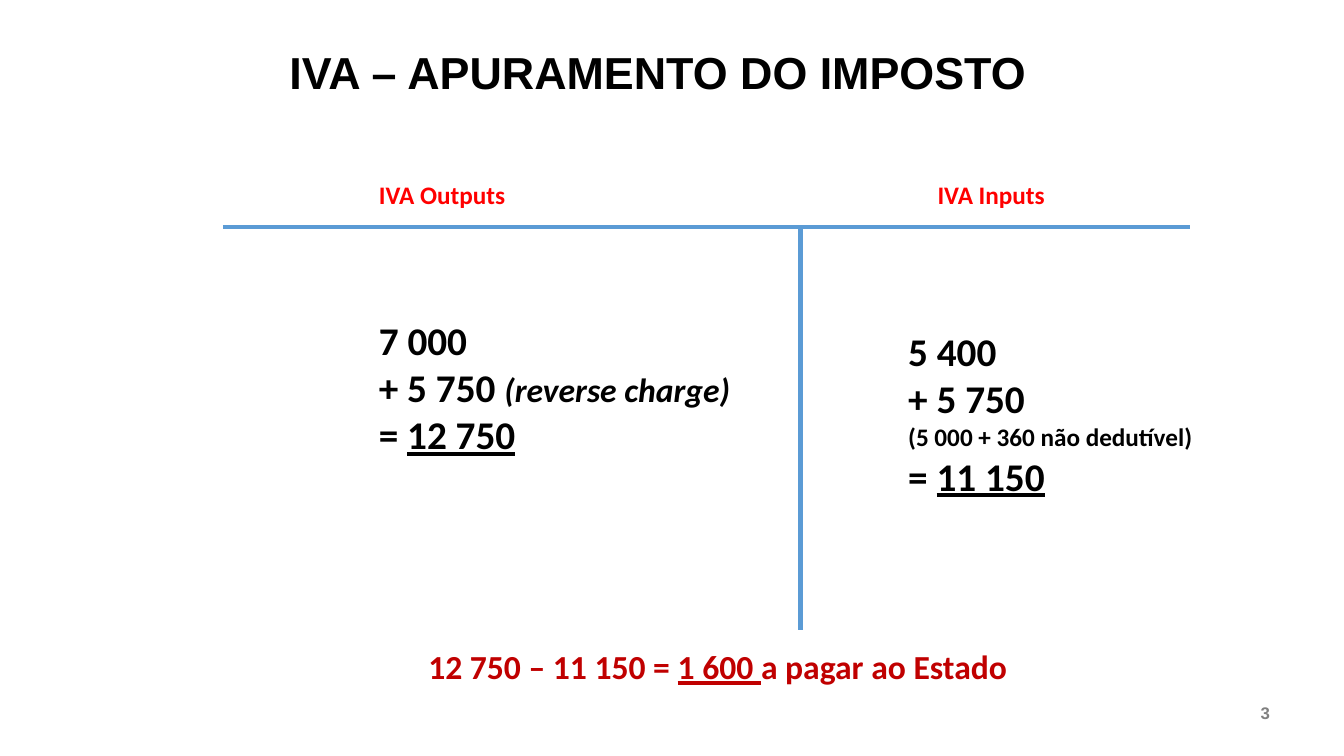
from pptx import Presentation
from pptx.dml.color import RGBColor
from pptx.enum import shapes, text
from pptx.oxml import ns
from pptx.util import Inches, Pt
from lxml import etree

BLACK = RGBColor(0x00, 0x00, 0x00)
RED = RGBColor(0xFF, 0x00, 0x00)
DARK_RED = RGBColor(0xC0, 0x00, 0x00)
GRAY = RGBColor(0x80, 0x80, 0x80)
BLUE = RGBColor(0x5B, 0x9B, 0xD5)


def write(box, lines, size, color=BLACK, font="Calibri",
          align=text.PP_ALIGN.LEFT, anchor=text.MSO_ANCHOR.TOP):
    """Fill box with lines, each a list of (text, font overrides) spans."""
    frame = box.text_frame
    frame.word_wrap = True
    frame.auto_size = text.MSO_AUTO_SIZE.NONE
    frame.vertical_anchor = anchor
    for index, line in enumerate(lines):
        para = frame.add_paragraph() if index else frame.paragraphs[0]
        para.alignment = align
        for words, changes in line:
            span = para.add_run()
            span.text = words
            span.font.name = font
            span.font.bold = True
            span.font.size = Pt(changes.get("size", size))
            span.font.italic = changes.get("italic", False)
            span.font.underline = changes.get("underline", False)
            span.font.color.rgb = color


deck = Presentation()
deck.slide_width, deck.slide_height = Inches(13.33), Inches(7.5)
page = deck.slides.add_slide(deck.slide_layouts[5])

title = page.shapes.title
title.left, title.top = Inches(2.77), Inches(0.39)
title.width, title.height = Inches(10.19), Inches(0.64)
write(title, [[("IVA – APURAMENTO DO IMPOSTO", {})]], 32, font="Arial")

# T-account: horizontal bar and vertical divider
for x1, y1, x2, y2 in [(2.21, 2.25, 11.8, 2.25), (7.94, 2.25, 7.94, 6.25)]:
    line = page.shapes.add_connector(
        shapes.MSO_CONNECTOR.STRAIGHT,
        Inches(x1), Inches(y1), Inches(x2), Inches(y2))
    line.line.color.rgb = BLUE
    line.line.width = Pt(3)
    etree.SubElement(line._element.spPr, ns.qn("a:effectLst"))

underlined = {"underline": True}
outputs = [
    [("7 000", {})],
    [("+ 5 750 ", {}), ("(reverse charge)", {"size": 24, "italic": True})],
    [("= ", {}), ("12 750", underlined)],
]
inputs = [
    [("5 400", {})],
    [("+ 5 750", {})],
    [("(5 000 + 360 não dedutível)", {"size": 18})],
    [("= ", {}), ("11 150", underlined)],
]
balance = [[("12 750 – 11 150 = ", {}), ("1 600 ", underlined),
            ("a pagar ao Estado", {})]]
number_format = {"color": GRAY, "font": "Arial",
                 "align": text.PP_ALIGN.CENTER,
                 "anchor": text.MSO_ANCHOR.BOTTOM}

for place, lines, size, options in [
    ((3.66, 1.73, 3.08, 0.4), [[("IVA Outputs", {})]], 18, {"color": RED}),
    ((9.2, 1.73, 2.61, 0.4), [[("IVA Inputs", {})]], 18, {"color": RED}),
    ((3.66, 3.09, 3.7, 1.51), outputs, 28, {}),
    ((8.91, 3.2, 3.56, 1.82), inputs, 28, {}),
    ((4.15, 6.36, 6.1, 0.5), balance, 24, {"color": DARK_RED}),
    ((12.14, 6.78, 0.82, 0.44), [[("3", {})]], 12, number_format),
]:
    box = page.shapes.add_textbox(*map(Inches, place))
    write(box, lines, size, **options)

deck.save("out.pptx")
